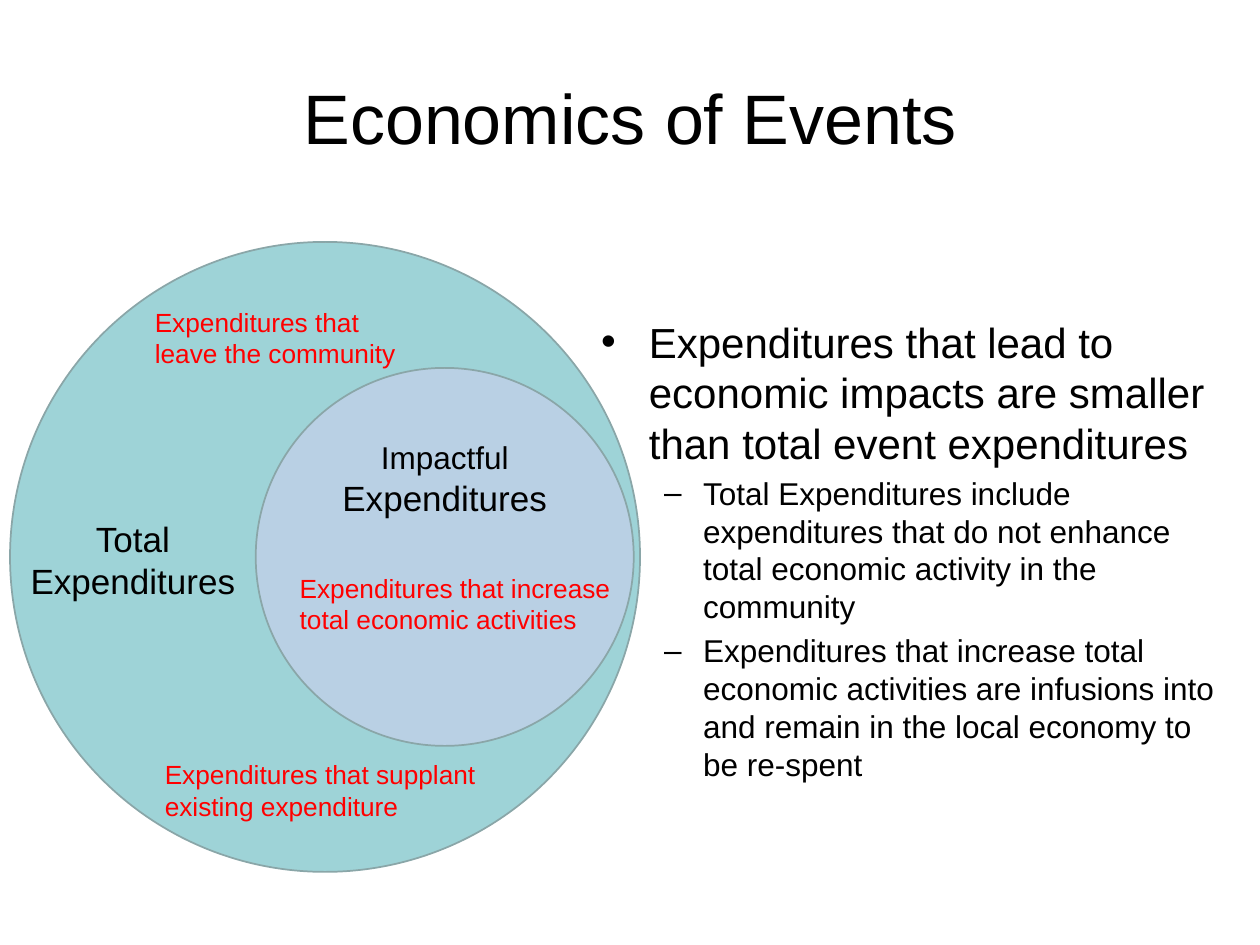
from lxml import etree
from pptx import Presentation
from pptx.dml.color import RGBColor
from pptx.enum.shapes import MSO_SHAPE
from pptx.enum.text import MSO_ANCHOR, MSO_AUTO_SIZE, PP_ALIGN
from pptx.oxml.ns import qn
from pptx.util import Inches, Pt

BLACK = RGBColor(0x00, 0x00, 0x00)
RED = RGBColor(0xFF, 0x00, 0x00)
TEAL = RGBColor(0x9E, 0xD3, 0xD7)
LAVENDER = RGBColor(0xCE, 0xCE, 0xEF)
OUTLINE = RGBColor(0x8A, 0xA6, 0xA8)


def add_run(p, text, size, color=BLACK):
    r = p.add_run()
    r.text = text
    r.font.name = "Arial"
    r.font.size = Pt(size)
    r.font.color.rgb = color


def place(sp, left, top, width, height):
    sp.left, sp.top = Inches(left), Inches(top)
    sp.width, sp.height = Inches(width), Inches(height)


prs = Presentation()
prs.slide_width, prs.slide_height = Inches(10), Inches(7.5)
s = prs.slides.add_slide(prs.slide_layouts[1])
title, body = s.placeholders

place(title, 0.5, 0.3, 9, 1.25)
title.text_frame.vertical_anchor = MSO_ANCHOR.MIDDLE
p = title.text_frame.paragraphs[0]
p.alignment = PP_ALIGN.CENTER
add_run(p, "Economics of Events", 40)

circles = [
    (0.08, 1.92, 5, TEAL, None),
    (2.03, 2.92, 3, LAVENDER, 58),
]
for left, top, size, color, opacity in circles:
    sp = s.shapes.add_shape(MSO_SHAPE.OVAL, Inches(left), Inches(top), Inches(size), Inches(size))
    sp.shadow.inherit = False
    sp.fill.solid()
    sp.fill.fore_color.rgb = color
    sp.line.color.rgb = OUTLINE
    sp.line.width = Pt(1)
    if opacity:
        clr = sp.fill._xPr.find(qn("a:solidFill"))[0]
        etree.SubElement(clr, qn("a:alpha"), val=str(opacity * 1000))

labels = [
    (2.56, 3.43, 1.94, 0.74, PP_ALIGN.CENTER, BLACK, [("Impactful ", 18), ("Expenditures", 20)]),
    (0.08, 4.06, 1.95, 0.77, PP_ALIGN.CENTER, BLACK, [("Total Expenditures", 20)]),
    (1.13, 2.38, 2.22, 0.61, PP_ALIGN.LEFT, RED, [("Expenditures that leave the community", 15)]),
    (1.21, 5.97, 2.83, 0.61, PP_ALIGN.LEFT, RED,
     [("Expenditures that supplant existing expenditure", 15)]),
    (2.28, 4.49, 2.78, 0.61, PP_ALIGN.LEFT, RED,
     [("Expenditures that increase total economic activities", 15)]),
]
for left, top, width, height, align, color, runs in labels:
    sp = s.shapes.add_textbox(Inches(left), Inches(top), Inches(width), Inches(height))
    tf = sp.text_frame
    tf.word_wrap = True
    tf.auto_size = MSO_AUTO_SIZE.SHAPE_TO_FIT_TEXT
    p = tf.paragraphs[0]
    p.alignment = align
    for text, size in runs:
        add_run(p, text, size, color)

place(body, 4.67, 2.46, 5.2, 4.29)
tf = body.text_frame
tf.auto_size = MSO_AUTO_SIZE.NONE
tf.vertical_anchor = MSO_ANCHOR.TOP
levels = [("•", 0.38, 0.38, 24), ("–", 0.81, 0.31, 18)]
points = [
    (0, "Expenditures that lead to economic impacts are smaller than total event expenditures"),
    (1, "Total Expenditures include expenditures that do not enhance total economic activity "
        "in the community"),
    (1, "Expenditures that increase total economic activities are infusions into and remain "
        "in the local economy to be re-spent"),
]
for i, (level, text) in enumerate(points):
    p = tf.add_paragraph() if i else tf.paragraphs[0]
    bullet, margin, hang, size = levels[level]
    p.level = level
    pPr = p._p.get_or_add_pPr()
    pPr.set("marL", str(Inches(margin)))
    pPr.set("indent", str(-Inches(hang)))
    spcBef = etree.SubElement(pPr, qn("a:spcBef"))
    etree.SubElement(spcBef, qn("a:spcPct"), val="20000")
    etree.SubElement(pPr, qn("a:buFont"), typeface="Arial")
    etree.SubElement(pPr, qn("a:buChar"), char=bullet)
    add_run(p, text, size)

prs.save("out.pptx")
